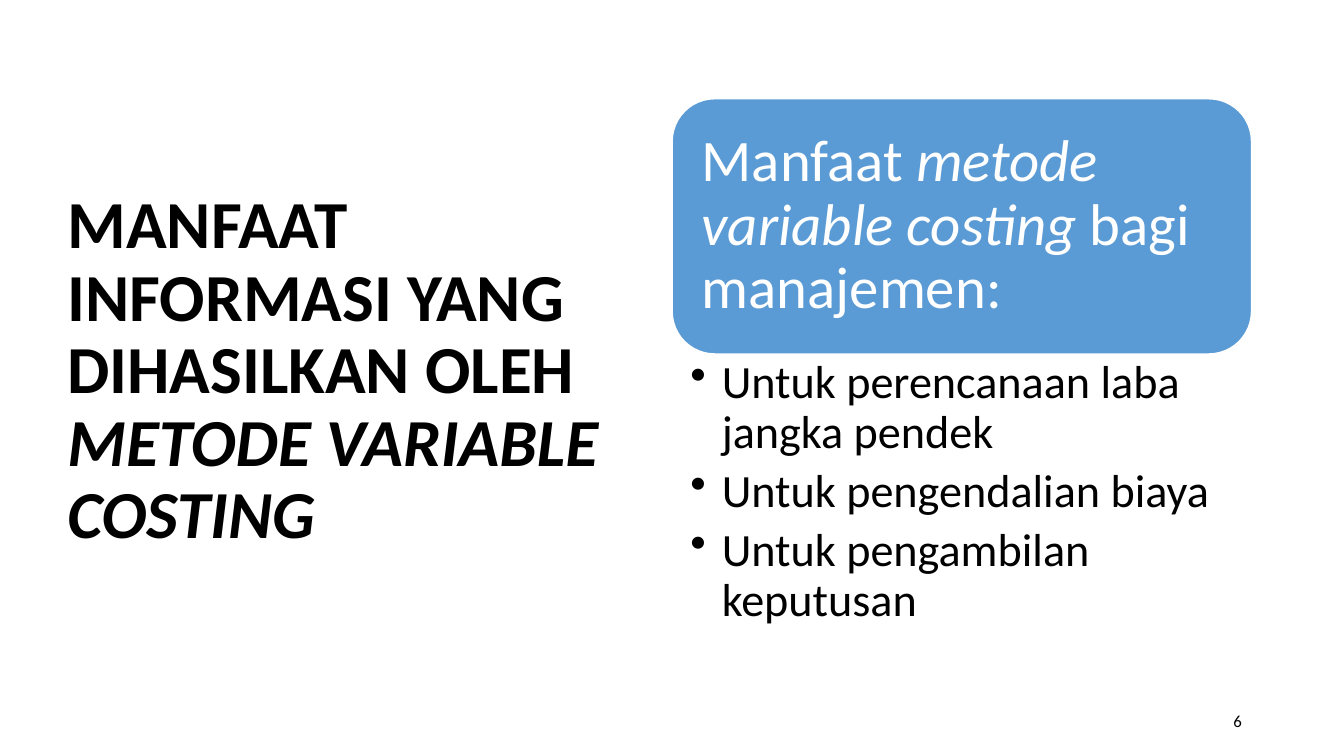
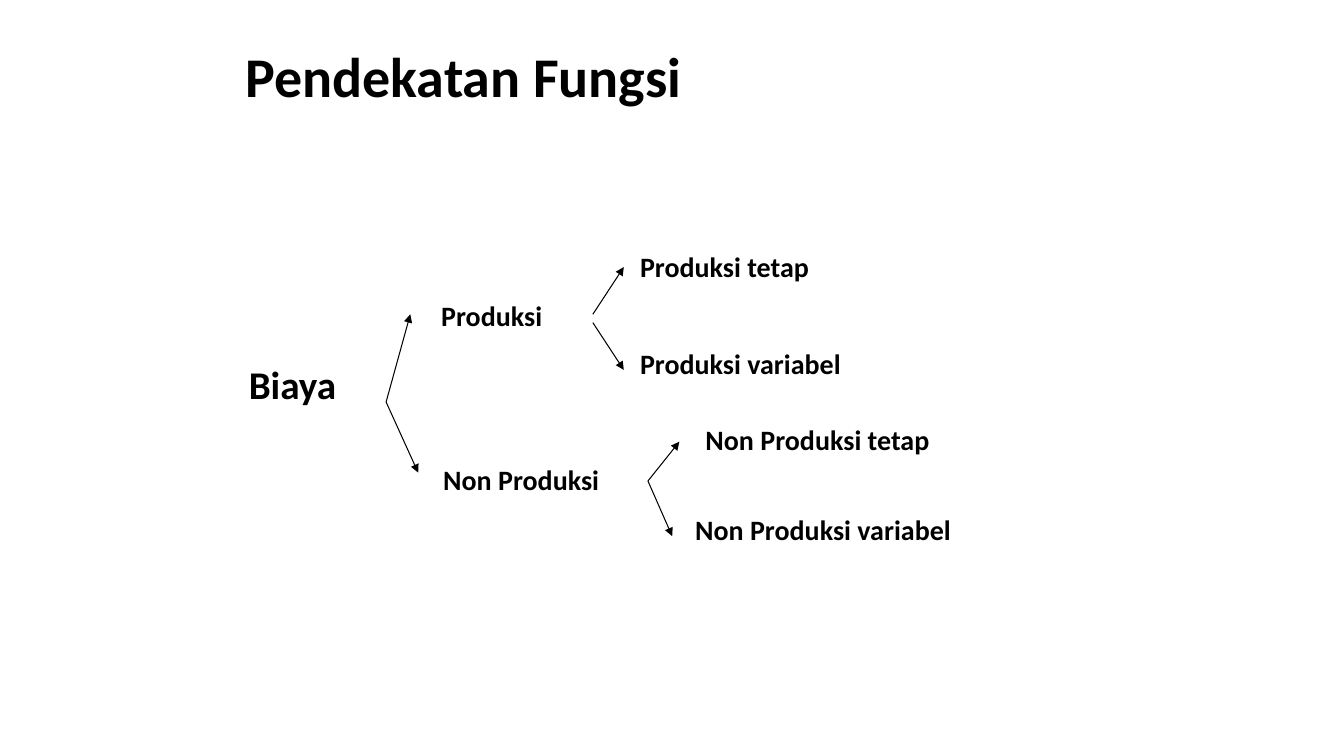
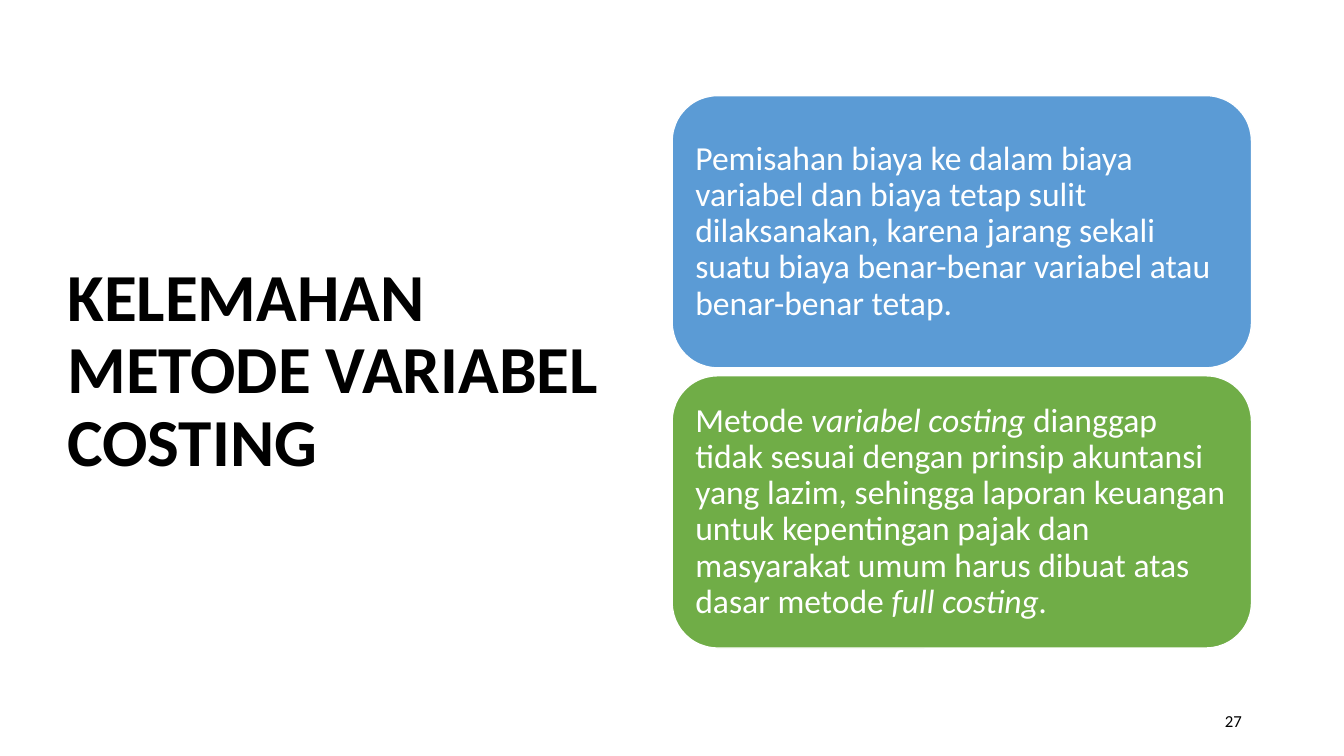
"""Build three slides on variable costing: two with cards and one cost tree."""
from dataclasses import dataclass

from lxml.etree import SubElement as add_sub
from pptx import Presentation as Deck
from pptx.dml.color import RGBColor as Rgb
from pptx.enum.shapes import MSO_CONNECTOR as Link, MSO_SHAPE as Form
from pptx.enum.text import MSO_ANCHOR as Anchor, MSO_AUTO_SIZE as Fit, PP_ALIGN as Align
from pptx.oxml.ns import qn
from pptx.util import Cm, Pt


@dataclass(frozen=True)
class Theme:
    font: str = "Calibri"
    ink: Rgb = Rgb(0x00, 0x00, 0x00)
    paper: Rgb = Rgb(0xFF, 0xFF, 0xFF)
    blue: Rgb = Rgb(0x5B, 0x9B, 0xD5)
    green: Rgb = Rgb(0x70, 0xAD, 0x47)
    title: float = 48
    head: float = 40
    lead: float = 42
    list: float = 33
    root: float = 28
    card: float = 24
    label: float = 20
    note: float = 12
    tight: float = 0.9


T = Theme()
SIDE = (1.45, 1.73, 14.4, 15.29)
LEFT, WIDE = 16.94, 14.6
PAD = (0.25, 0.13, 0.25, 0.13)


def apply(item, form):
    for name, value in form.items():
        setattr(item, name, value)


def write(shape, lines, size, ink=T.ink, bold=False, pad=PAD, anchor=Anchor.TOP, **form):
    frame = shape.text_frame
    sides = ("margin_left", "margin_top", "margin_right", "margin_bottom")
    apply(frame, dict(zip(sides, map(Cm, pad))))
    apply(frame, {"word_wrap": True, "auto_size": Fit.NONE, "vertical_anchor": anchor})
    for index, line in enumerate(lines):
        para = frame.add_paragraph() if index else frame.paragraphs[0]
        apply(para, {"alignment": Align.LEFT, **form})
        for part, words in enumerate(line.split("*")):
            if words:
                run = para.add_run()
                run.text = words
                apply(run.font, {"name": T.font, "size": Pt(size), "bold": bold,
                                 "italic": part % 2 == 1})
                run.font.color.rgb = ink
    return frame


def add_text(slide, box, lines, size, **form):
    return write(slide.shapes.add_textbox(*map(Cm, box)), lines, size, **form)


def add_slide(deck, text, box, size):
    slide = deck.slides.add_slide(deck.slide_layouts[5])
    title = slide.shapes.title
    apply(title, dict(zip(("left", "top", "width", "height"), map(Cm, box))))
    write(title, [text], size, bold=True, anchor=Anchor.MIDDLE, line_spacing=T.tight)
    return slide


def add_page(slide, page):
    add_text(slide, (23.93, 17.65, 7.62, 1.02), [page], T.note,
             anchor=Anchor.MIDDLE, alignment=Align.RIGHT)


def add_card(slide, top, high, fill, text, size, pad):
    card = slide.shapes.add_shape(Form.ROUNDED_RECTANGLE, *map(Cm, (LEFT, top, WIDE, high)))
    card.shadow.inherit = False
    card.fill.solid()
    card.fill.fore_color.rgb = fill
    card.line.color.rgb = T.paper
    card.line.width = Pt(1)
    write(card, [text], size, ink=T.paper, pad=(pad,) * 4,
          anchor=Anchor.MIDDLE, line_spacing=T.tight)


def add_list(slide, box, lines):
    frame = add_text(slide, box, lines, T.list, pad=(0.46, 0.15, 0.84, 0.15),
                     line_spacing=T.tight, space_after=Pt(T.list * 0.2))
    for para in frame.paragraphs:
        props = para._p.get_or_add_pPr()
        props.set("marL", str(Cm(0.79)))
        props.set("indent", str(-Cm(0.79)))
        add_sub(props, qn("a:buChar"), char="•")


def add_arrow(slide, start, end):
    arrow = slide.shapes.add_connector(Link.STRAIGHT, *map(Cm, start + end))
    arrow.line.color.rgb = T.ink
    arrow.line.width = Pt(0.75)
    props = arrow._element.spPr
    add_sub(props.find(qn("a:ln")), qn("a:tailEnd"), type="triangle")
    add_sub(props, qn("a:effectLst"))


def add_uses(deck):
    slide = add_slide(deck, "MANFAAT INFORMASI YANG DIHASILKAN OLEH *METODE VARIABLE COSTING*",
                      SIDE, T.title)
    add_page(slide, "6")
    add_card(slide, 2.49, 6.43, T.blue, "Manfaat *metode variable costing* bagi manajemen:",
             T.lead, 0.43)
    add_list(slide, (LEFT, 8.89, WIDE, 7.37), [
        "Untuk perencanaan laba jangka pendek",
        "Untuk pengendalian biaya",
        "Untuk pengambilan keputusan",
    ])


def add_tree(deck):
    slide = add_slide(deck, "Pendekatan Fungsi", (5.94, 0.64, 22.66, 2.74), T.head)
    add_text(slide, (6.02, 9.09, 3.5, 1.35), ["Biaya"], T.root, bold=True,
             line_spacing=T.tight)
    labels = [
        ("Produksi", 10.87, 7.39, 3.07),
        ("Non Produksi", 10.92, 11.53, 4.52),
        ("Produksi tetap", 15.88, 6.17, 6.65),
        ("Produksi variabel", 15.88, 8.59, 5.72),
        ("Non Produksi tetap", 17.53, 10.52, 6.17),
        ("Non Produksi variabel", 17.27, 12.78, 7.14),
    ]
    for text, left, top, wide in labels:
        add_text(slide, (left, top, wide, 1.12), [text], T.label, bold=True)
    arrows = [
        ((9.73, 10.13), (10.34, 7.92)),
        ((9.73, 10.13), (10.54, 11.91)),
        ((14.94, 7.92), (15.72, 6.73)),
        ((14.94, 8.13), (15.72, 9.32)),
        ((16.33, 12.12), (17.12, 11.13)),
        ((16.33, 12.12), (16.94, 13.51)),
    ]
    for start, end in arrows:
        add_arrow(slide, start, end)


def add_flaws(deck):
    slide = add_slide(deck, "KELEMAHAN METODE VARIABEL COSTING", SIDE, T.title)
    add_page(slide, "27")
    cards = [
        (T.blue, "Pemisahan biaya ke dalam biaya variabel dan biaya tetap sulit dilaksanakan, "
                 "karena jarang sekali suatu biaya benar-benar variabel atau benar-benar tetap."),
        (T.green, "Metode *variabel costing *dianggap tidak sesuai dengan prinsip akuntansi yang "
                  "lazim, sehingga laporan keuangan untuk kepentingan pajak dan masyarakat umum "
                  "harus dibuat atas dasar metode *full costing.*"),
    ]
    high, gap = 6.86, 0.2
    for index, (fill, text) in enumerate(cards):
        add_card(slide, 2.41 + index * (high + gap), high, fill, text, T.card, 0.25)


def main():
    deck = Deck()
    apply(deck, {"slide_width": Cm(33.87), "slide_height": Cm(19.05)})
    for build in (add_uses, add_tree, add_flaws):
        build(deck)
    deck.save("out.pptx")


if __name__ == "__main__":
    main()
